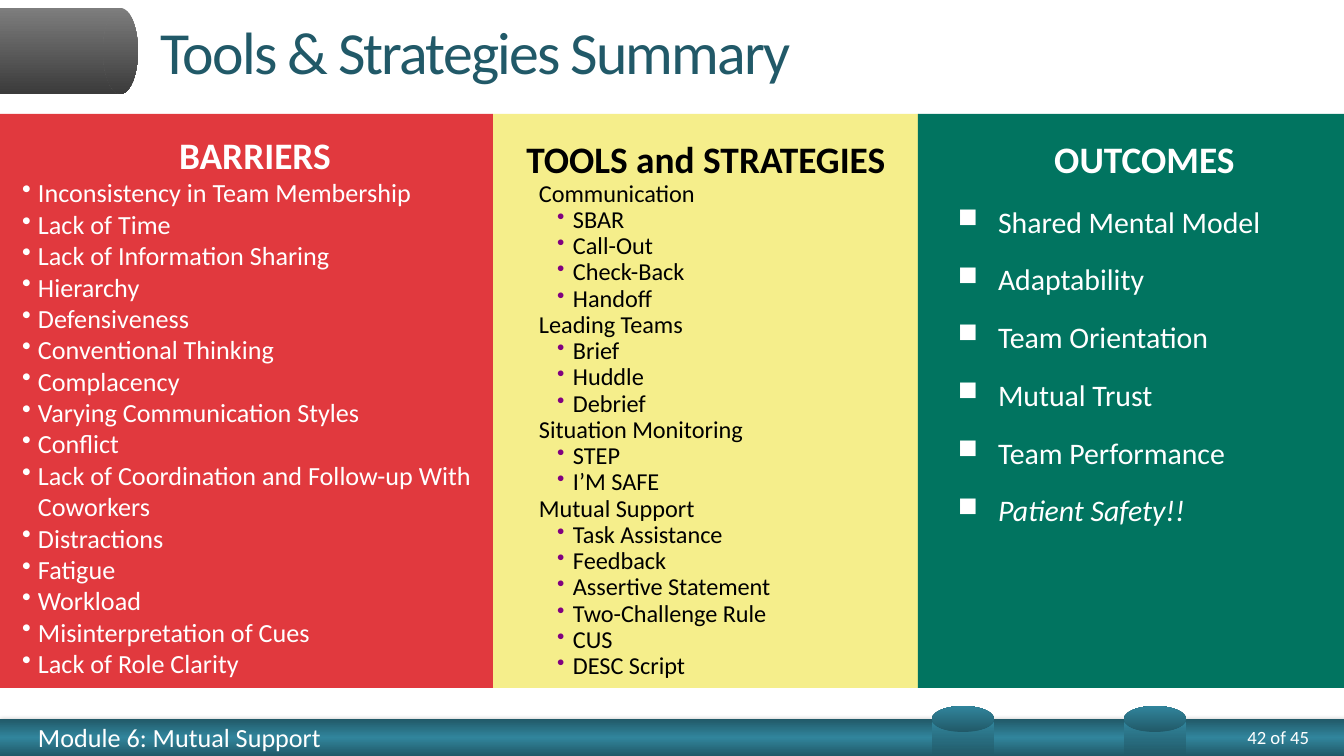
from lxml.etree import SubElement
from pptx import Presentation
from pptx.dml.color import RGBColor
from pptx.enum.shapes import MSO_SHAPE as Shape
from pptx.enum.text import MSO_ANCHOR as Anchor, PP_ALIGN as Align
from pptx.oxml.ns import qn
from pptx.util import Emu, Pt

SCALE = 914400 / 134.4
FONT = "Calibri"
WHITE, BLACK, PURPLE = "FFFFFF", "000000", "800080"
DEEP_TEAL, TEAL = "215968", "31859C"
GREYS = [(0, "7D7D7D"), (100, "3B3B3B")]
TEALS = [(0, DEEP_TEAL), (100, TEAL)]
FOOTER_TEALS = [(0, DEEP_TEAL), (50, TEAL), (100, DEEP_TEAL)]

BARRIERS = [
    "Inconsistency in Team Membership", "Lack of Time",
    "Lack of Information Sharing", "Hierarchy", "Defensiveness",
    "Conventional Thinking", "Complacency", "Varying Communication Styles",
    "Conflict", "Lack of Coordination and Follow-up With Coworkers",
    "Distractions", "Fatigue", "Workload", "Misinterpretation of Cues",
    "Lack of Role Clarity",
]
TOOLS = {
    "Communication": ["SBAR", "Call-Out", "Check-Back", "Handoff"],
    "Leading Teams": ["Brief", "Huddle", "Debrief"],
    "Situation Monitoring": ["STEP", "I’M SAFE"],
    "Mutual Support": ["Task Assistance", "Feedback", "Assertive Statement",
                       "Two-Challenge Rule", "CUS", "DESC Script"],
}
OUTCOMES = ["Shared Mental Model", "Adaptability", "Team Orientation",
            "Mutual Trust", "Team Performance", "Patient Safety!!"]


def px(length):
    """Turn px into EMU."""
    return Emu(round(length * SCALE))


def rgb(value):
    """Turn a hex string into a colour."""
    return RGBColor.from_string(value)


def add_block(shapes, kind, box):
    """Add a preset shape without line or shadow."""
    block = shapes.add_shape(kind, *map(px, box))
    block.shadow.inherit = False
    block.line.fill.background()
    return block


def add_gradient_block(shapes, kind, box, stops, angle, rotation=0):
    """Add a shape with a linear gradient."""
    block = add_block(shapes, kind, box)
    block.rotation = rotation
    block.fill.gradient()
    block.fill.gradient_angle = -angle % 360
    stop_list = block.element.spPr.find(qn("a:gradFill")).find(qn("a:gsLst"))
    stop_list.clear()
    for position, value in stops:
        stop = SubElement(stop_list, qn("a:gs"), pos=str(position * 1000))
        SubElement(stop, qn("a:srgbClr"), val=value)
    return block


def add_soft_shadow(block):
    """Give a shape a faint shadow below."""
    effects = block.element.spPr.find(qn("a:effectLst"))
    shadow = SubElement(effects, qn("a:outerShdw"), blurRad="39370",
                        dist="12700", dir="5400000", rotWithShape="0")
    tint = SubElement(shadow, qn("a:srgbClr"), val=BLACK)
    SubElement(tint, qn("a:alpha"), val="35000")


def set_font(paragraph, size, value, bold=False):
    """Format all runs of a paragraph."""
    for run in paragraph.runs:
        run.font.name = FONT
        run.font.size = Pt(size)
        run.font.bold = bold
        run.font.color.rgb = rgb(value)


def set_margins(frame, left, top, right, bottom):
    """Set the text insets in px."""
    frame.margin_left, frame.margin_top = px(left), px(top)
    frame.margin_right, frame.margin_bottom = px(right), px(bottom)


def set_indent(paragraph, left, first):
    """Set the left margin and first-line indent."""
    properties = paragraph._p.get_or_add_pPr()
    properties.set("marL", str(px(left)))
    properties.set("indent", str(px(first)))


def set_bullet(paragraph, mark, value, size=100):
    """Give a paragraph a coloured bullet."""
    properties = paragraph._p.get_or_add_pPr()
    tint = SubElement(properties, qn("a:buClr"))
    SubElement(tint, qn("a:srgbClr"), val=value)
    SubElement(properties, qn("a:buSzPct"), val=str(size * 1000))
    SubElement(properties, qn("a:buChar"), char=mark)


def add_label(shapes, box, text, size, value, margins=(0, 0, 0, 0), align=Align.LEFT):
    """Add a line of text centred vertically."""
    frame = shapes.add_textbox(*map(px, box)).text_frame
    frame.word_wrap = True
    frame.vertical_anchor = Anchor.MIDDLE
    set_margins(frame, *margins)
    frame.text = text
    line = frame.paragraphs[0]
    line.alignment = align
    set_font(line, size, value)
    return line


def add_column(shapes, left, width, fill, value, heading, entries, size, spacing):
    """Add a coloured column and return its heading and entries."""
    column = add_block(shapes, Shape.RECTANGLE, (left, 114, width, 574))
    column.fill.solid()
    column.fill.fore_color.rgb = rgb(fill)
    frame = column.text_frame
    frame.word_wrap = True
    frame.vertical_anchor = Anchor.TOP
    set_margins(frame, 13, 27, 13, 7)
    frame.text = "\n".join([heading, *entries])
    title, *lines = frame.paragraphs
    title.alignment = Align.CENTER
    title.line_spacing = 0.9
    set_font(title, 20, value, bold=True)
    for line in lines:
        line.alignment = Align.LEFT
        line.line_spacing = spacing
        set_font(line, size, value)
    return title, lines


def add_tools(shapes):
    """Add the column of tools grouped by topic."""
    entries = [entry for topic, tools in TOOLS.items() for entry in (topic, *tools)]
    _, lines = add_column(shapes, 493, 426, "F5EE8B", BLACK,
                          "TOOLS and STRATEGIES", entries, 13, 0.9)
    for line in lines:
        line.level = 1
        if line.text in TOOLS:
            set_indent(line, 67, -34)
        else:
            set_indent(line, 67, -16)
            set_bullet(line, "•", PURPLE, 90)


def add_outcomes(shapes):
    """Add the column of outcomes."""
    title, lines = add_column(shapes, 918, 426, "017460", WHITE,
                              "OUTCOMES", OUTCOMES, 16, 1.3)
    set_indent(title, 67, -40)
    for line in lines:
        set_indent(line, 67, -40)
        line.space_before = Pt(6)
        set_bullet(line, "■", WHITE, 90)
    lines[-1].runs[0].font.italic = True


def add_barriers(shapes):
    """Add the column of barriers."""
    title, lines = add_column(shapes, 0, 493, "E1393E", WHITE,
                              "BARRIERS", BARRIERS, 14, 1.0)
    title.line_spacing = 0.8
    set_indent(title, 51, -34)
    for line in lines:
        set_indent(line, 25, -16)
        set_bullet(line, "•", WHITE)


def add_frame(shapes):
    """Add the footer, the title tab and the footer cylinders."""
    footer = add_gradient_block(shapes, Shape.RECTANGLE, (0, 719, 1344, 37),
                                FOOTER_TEALS, 270)
    add_soft_shadow(footer)
    add_label(shapes, (38, 719, 720, 37), "Module 6: Mutual Support", 14, WHITE)
    add_label(shapes, (1200, 719, 109, 37), "42 of 45", 10, WHITE, align=Align.RIGHT)
    tab = shapes.add_group_shape().shapes
    add_gradient_block(tab, Shape.RECTANGLE, (0, 8, 121, 86), GREYS, 90)
    add_gradient_block(tab, Shape.OVAL, (103, 8, 35, 86), GREYS, 90)
    for left in (945, 1137):
        cylinder = shapes.add_group_shape().shapes
        add_gradient_block(cylinder, Shape.RECTANGLE, (left, 707, 36, 62), TEALS, 0, 270)
        add_gradient_block(cylinder, Shape.OVAL, (left + 5, 688, 26, 62), TEALS, 0, 270)


def main():
    """Build the summary slide."""
    deck = Presentation()
    deck.slide_width, deck.slide_height = px(1344), px(756)
    shapes = deck.slides.add_slide(deck.slide_layouts[6]).shapes
    add_frame(shapes)
    title = add_label(shapes, (148, 0, 1179, 101), "Tools & Strategies Summary",
                      32, DEEP_TEAL, margins=(13, 7, 13, 7))
    title.runs[0].font._element.set("spc", "-100")
    add_tools(shapes)
    add_outcomes(shapes)
    add_barriers(shapes)
    deck.save("out.pptx")


if __name__ == "__main__":
    main()
